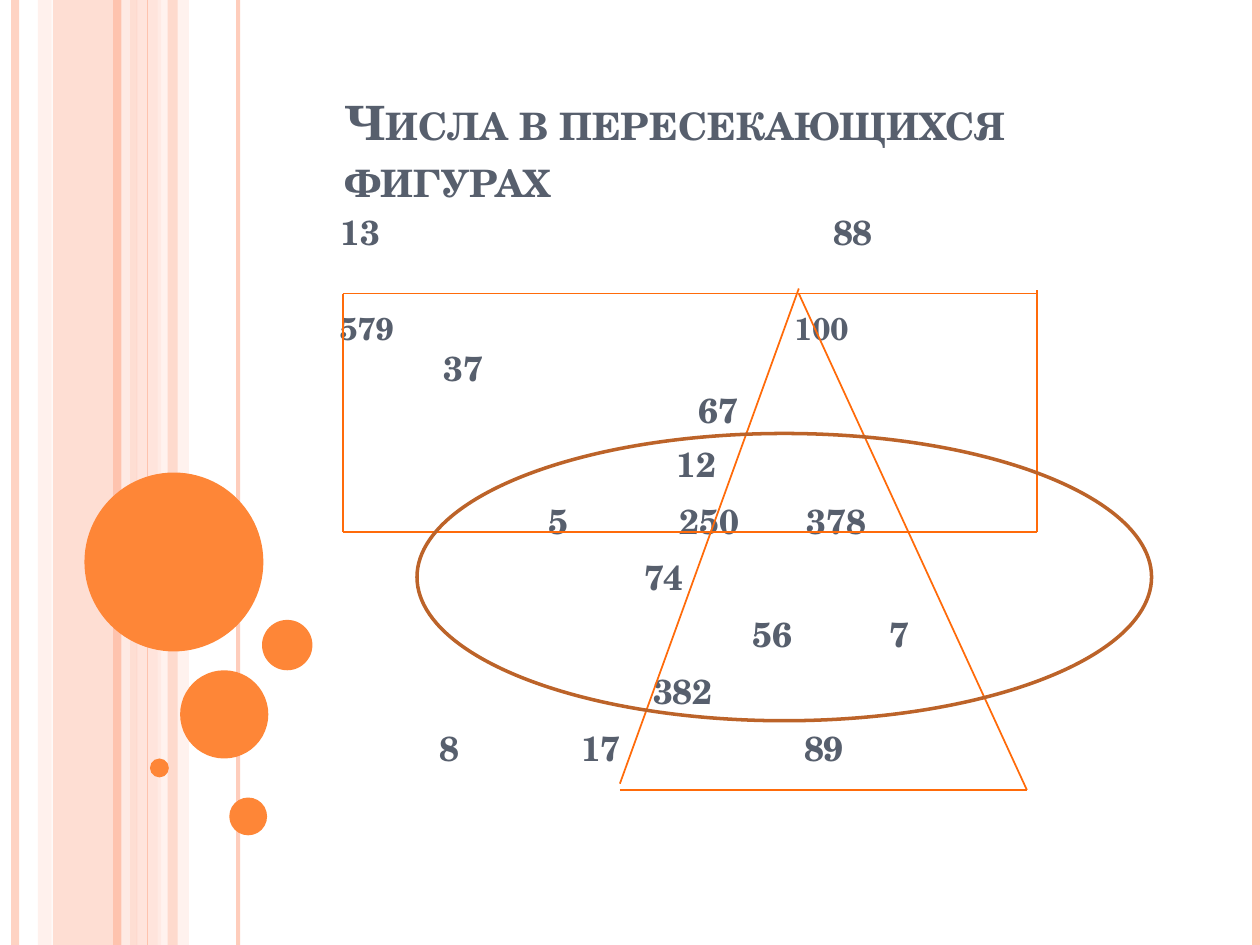
from lxml.etree import SubElement
from pptx import Presentation
from pptx.dml.color import RGBColor
from pptx.enum.shapes import MSO_CONNECTOR, MSO_SHAPE
from pptx.enum.text import MSO_ANCHOR, PP_ALIGN
from pptx.oxml.ns import qn
from pptx.util import Inches, Pt

FONT = "TeX Gyre Schola"
SLATE, ORANGE, BRIGHT, BROWN = "575F6D", "FE8637", "FF6B0A", "BC6329"
PEACH, BLUSH, CREAM = "FEC3AE", "FFD9CE", "FFEDE8"
WIDTH, HEIGHT = Inches(10), Inches(7.5)
COLUMNS, ROWS = 10, 7.5
LABEL_WIDTH, LABEL_HEIGHT = 0.8, 0.4

BANDS = [(0.42, 0.67, PEACH, 54), (0.3, 0.11, BLUSH, 36),
         (1.08, 0.2, BLUSH, 70), (1.25, 0.25, CREAM, 71)]
STRIPES = [(0.12, PEACH, 4.5, 73), (1, CREAM, 4.5, 83), (0.93, PEACH, 4.5, 100),
           (1.89, PEACH, 2.25, 82), (1.17, PEACH, 0.75, 100), (9.97, PEACH, 4.5, 100)]
FRONT_BAND = (1.33, 0.08, PEACH, 51)
BUBBLES = [(0.67, 3.75, 1.42), (1.43, 5.32, 0.7), (1.19, 6.02, 0.15),
           (1.82, 6.33, 0.3), (2.08, 4.92, 0.4)]

LEFT, RIGHT, TOP, BOTTOM = 2.72, 8.23, 2.33, 4.22
RECTANGLE_SIDES = [((RIGHT, BOTTOM), (LEFT, BOTTOM)), ((RIGHT, 4.03), (RIGHT, 2.3)),
                   ((LEFT, BOTTOM), (LEFT, TOP)), ((LEFT, TOP), (RIGHT, TOP)),
                   ((RIGHT, 3.83), (RIGHT, BOTTOM))]
TRIANGLE_SIDES = [((6.34, TOP), (8.15, 6.27)), ((6.34, 2.29), (4.92, 6.22)),
                  ((4.92, 6.27), (8.15, 6.27))]

NUMBER_ROWS = [
    (1.84, 19.8, {"13": 2.86, "88": 6.77}),
    (2.6, 18, {"579": 2.91, "100": 6.52}),
    (2.92, 19.8, {"37": 3.68}),
    (3.25, 19.8, {"67": 5.7}),
    (3.68, 19.8, {"12": 5.53}),
    (4.13, 19.8, {"5": 4.43, "250": 5.63, "378": 6.64}),
    (4.58, 19.8, {"74": 5.27}),
    (5.03, 19.8, {"56": 6.13, "7": 7.14}),
    (5.48, 19.8, {"382": 5.42}),
    (5.93, 19.8, {"8": 3.57, "17": 4.77, "89": 6.54}),
]


def x(columns):
    """Turn grid columns into a length."""
    return round(WIDTH * columns / COLUMNS)


def y(rows):
    """Turn grid rows into a length."""
    return round(HEIGHT * rows / ROWS)


def paint(fill, color, opacity=100):
    """Give a fill a solid colour with an opacity in percent."""
    fill.solid()
    fill.fore_color.rgb = RGBColor.from_string(color)
    if opacity < 100:
        color_element = next(fill._xPr.iter(qn("a:srgbClr")))
        SubElement(color_element, qn("a:alpha"), val=str(opacity * 1000))


def add_figure(slide, kind, left, top, width, height, fill=None, opacity=100,
               outline=None, weight=1):
    """Add a preset shape with an optional fill and outline."""
    figure = slide.shapes.add_shape(kind, x(left), y(top), x(width), y(height))
    figure.shadow.inherit = False
    if fill:
        paint(figure.fill, fill, opacity)
    else:
        figure.fill.background()
    if outline:
        paint(figure.line.fill, outline)
        figure.line.width = Pt(weight)
    else:
        figure.line.fill.background()


def add_band(slide, left, width, color, opacity):
    """Add a full-height vertical band."""
    add_figure(slide, MSO_SHAPE.RECTANGLE, left, 0, width, ROWS, color, opacity)


def add_line(slide, start, end, color, weight=1, opacity=100):
    """Add a straight line between two grid points."""
    line = slide.shapes.add_connector(
        MSO_CONNECTOR.STRAIGHT, x(start[0]), y(start[1]), x(end[0]), y(end[1]))
    paint(line.line.fill, color, opacity)
    line.line.width = Pt(weight)
    SubElement(line._element.spPr, qn("a:effectLst"))


def write(frame, text, size, align=PP_ALIGN.LEFT, anchor=MSO_ANCHOR.MIDDLE,
          small_caps=False, wrap=True):
    """Write one bold paragraph into a text frame."""
    frame.word_wrap = wrap
    frame.vertical_anchor = anchor
    frame.margin_top = frame.margin_bottom = 0
    paragraph = frame.paragraphs[0]
    paragraph.alignment = align
    paragraph.line_spacing = 1
    run = paragraph.add_run()
    run.text = text
    run.font.name, run.font.size, run.font.bold = FONT, Pt(size), True
    run.font.color.rgb = RGBColor.from_string(SLATE)
    if small_caps:
        run.font._element.set("cap", "small")


def add_heading(slide, text):
    """Place and format the slide title."""
    heading = slide.shapes.title
    heading.left, heading.top = x(2.64), y(0.74)
    heading.width, heading.height = x(6.75), y(0.91)
    write(heading.text_frame, text, 27, anchor=MSO_ANCHOR.TOP, small_caps=True)


def add_number(slide, number, center, middle, size):
    """Add a number centred on a grid point."""
    label = slide.shapes.add_textbox(
        x(center - LABEL_WIDTH / 2), y(middle - LABEL_HEIGHT / 2),
        x(LABEL_WIDTH), y(LABEL_HEIGHT))
    write(label.text_frame, number, size, align=PP_ALIGN.CENTER)


def add_decoration(slide):
    """Draw the striped margin and its bubbles."""
    for band in BANDS:
        add_band(slide, *band)
    for column, color, weight, opacity in STRIPES:
        add_line(slide, (column, 0), (column, ROWS), color, weight, opacity)
    add_band(slide, *FRONT_BAND)
    for left, top, diameter in BUBBLES:
        add_figure(slide, MSO_SHAPE.OVAL, left, top, diameter, diameter, ORANGE)


def main():
    """Build the slide and save it."""
    deck = Presentation()
    deck.slide_width, deck.slide_height = WIDTH, HEIGHT
    slide = deck.slides.add_slide(deck.slide_layouts[5])
    add_decoration(slide)
    add_heading(slide, "Числа в пересекающихся фигурах")
    for middle, size, numbers in NUMBER_ROWS:
        for number, center in numbers.items():
            add_number(slide, number, center, middle, size)
    for start, end in RECTANGLE_SIDES + TRIANGLE_SIDES:
        add_line(slide, start, end, BRIGHT)
    add_figure(slide, MSO_SHAPE.OVAL, 3.31, 3.44, 5.83, 2.28, outline=BROWN, weight=2)
    deck.save("out.pptx")


if __name__ == "__main__":
    main()
